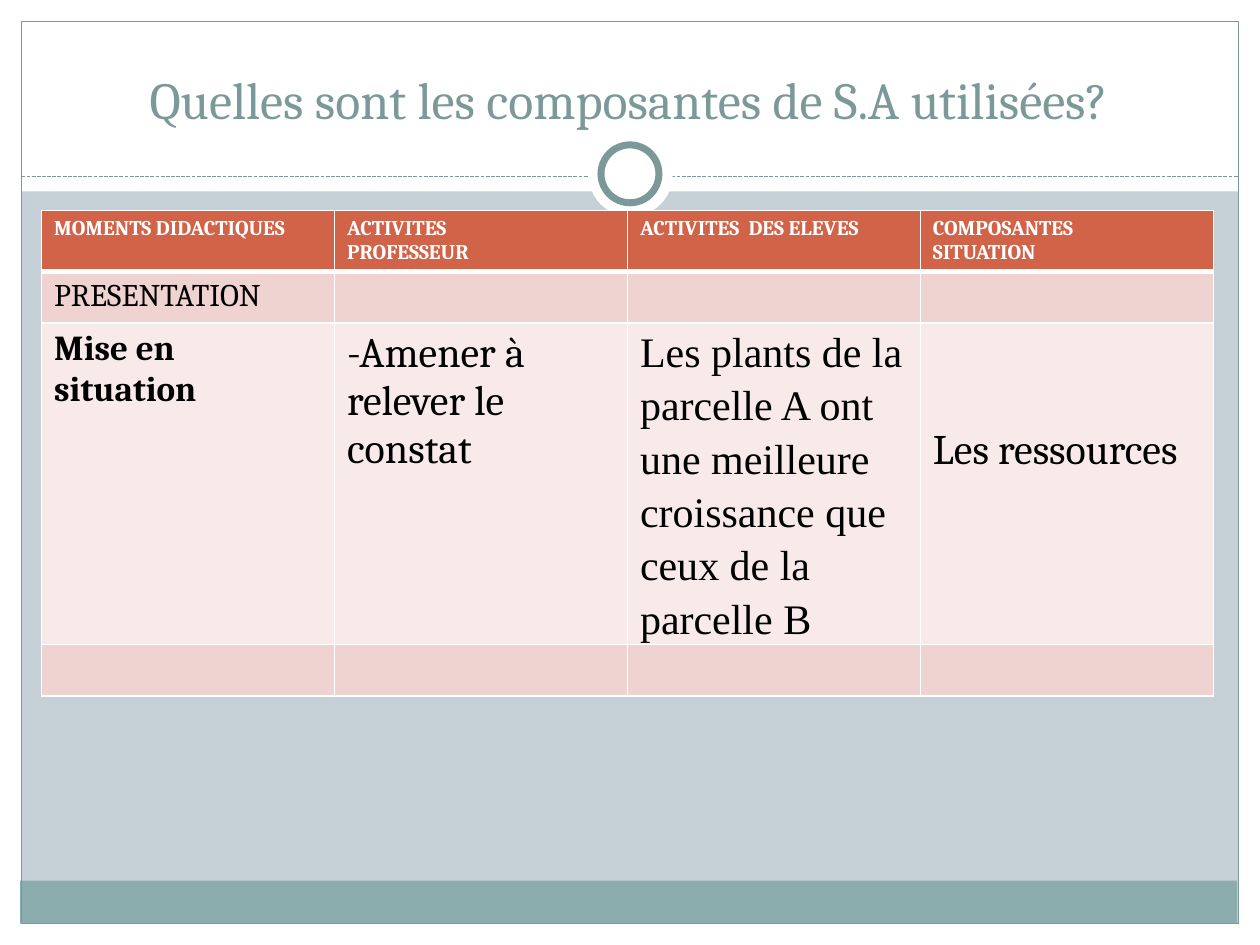
import pptx
import pptx.util
import pptx.dml.color
import pptx.enum.dml
import pptx.enum.shapes
import pptx.enum.text
import pptx.oxml
import pptx.oxml.ns
from dataclasses import dataclass

Inches, Pt = pptx.util.Inches, pptx.util.Pt
Shape = pptx.enum.shapes.MSO_SHAPE
Align = pptx.enum.text.PP_ALIGN


@dataclass
class Theme:
    # Colours
    ground: str = "C5D1D7"
    white: str = "FFFFFF"
    black: str = "000000"
    teal: str = "7C999A"
    band: str = "8CADAE"
    head: str = "D16349"
    rose: str = "EED3D0"
    pale: str = "F7EAE9"
    # Fonts and sizes
    font: str = "Cambria"
    serif: str = "Times New Roman"
    title: float = 29.7
    label: int = 12
    phase: int = 18
    step: int = 20
    body: int = 24


def shade(code):
    return pptx.dml.color.RGBColor.from_string(code)


class Deck:
    def __init__(self, theme):
        self.theme = theme
        self.file = pptx.Presentation()
        self.file.slide_width, self.file.slide_height = Inches(10), Inches(7.5)
        self.slide = self.file.slides.add_slide(self.file.slide_layouts[5])
        fill = self.slide.background.fill
        fill.solid()
        fill.fore_color.rgb = shade(theme.ground)

    def style(self, part, size, colour, bold=False, font=None):
        for run in part.runs:
            run.font.name = font or self.theme.font
            run.font.size = Pt(size)
            run.font.bold = bold
            run.font.color.rgb = shade(colour)

    def shape(self, kind, box, fill=None, line=None, width=0.75):
        item = self.slide.shapes.add_shape(kind, *map(Inches, box))
        item.shadow.inherit = False
        if fill:
            item.fill.solid()
            item.fill.fore_color.rgb = shade(fill)
        else:
            item.fill.background()
        if line:
            item.line.color.rgb = shade(line)
            item.line.width = Pt(width)
        else:
            item.line.fill.background()

    def rule(self, left, right, top):
        line = self.slide.shapes.add_connector(
            pptx.enum.shapes.MSO_CONNECTOR.STRAIGHT,
            Inches(left), Inches(top), Inches(right), Inches(top))
        line.line.color.rgb = shade(self.theme.teal)
        line.line.width = Pt(0.75)
        line.line.dash_style = pptx.enum.dml.MSO_LINE.SQUARE_DOT
        props = line._element.spPr
        props.append(props.makeelement(pptx.oxml.ns.qn("a:effectLst"), {}))

    def title(self, text, box):
        item = self.slide.shapes.title
        item.left, item.top, item.width, item.height = map(Inches, box)
        # Bring the title in front of the white panel
        self.slide.shapes._spTree.append(item._element)
        frame = item.text_frame
        frame.text = text
        frame.word_wrap = True
        frame.vertical_anchor = pptx.enum.text.MSO_ANCHOR.BOTTOM
        frame.paragraphs[0].alignment = Align.CENTER
        self.style(frame.paragraphs[0], self.theme.title, self.theme.teal)

    def edge(self, cell, base):
        props = cell._tc.get_or_add_tcPr()
        for side, width in (("L", 1), ("R", 1), ("T", 1), ("B", base)):
            props.append(pptx.oxml.parse_xml(
                f'<a:ln{side} {pptx.oxml.ns.nsdecls("a")} w="{Pt(width)}">'
                f'<a:solidFill><a:srgbClr val="{self.theme.white}"/></a:solidFill>'
                f'</a:ln{side}>'))

    def table(self, left, top, width, rows, fills, looks):
        count = len(rows[0][1])
        grid = self.slide.shapes.add_table(
            len(rows), count, Inches(left), Inches(top), Inches(width),
            Inches(sum(height for height, _ in rows))).table
        for y, (height, texts) in enumerate(rows):
            grid.rows[y].height = Inches(height)
            for x, text in enumerate(texts):
                cell = grid.cell(y, x)
                self.edge(cell, 3 if y == 0 else 1)
                cell.fill.solid()
                cell.fill.fore_color.rgb = shade(fills[y])
                if text:
                    cell.text_frame.text = text
                    for part in cell.text_frame.paragraphs:
                        self.style(part, *looks.get((y, x), looks[y]))
        return grid

    def save(self):
        self.file.save("out.pptx")


def main():
    theme = Theme()
    deck = Deck(theme)

    # White margins, footer band and frame
    for box in ((0, 7.33, 10, 0.17), (0, 0, 10, 1.52),
                (0, 0, 0.17, 7.5), (9.83, 0, 0.17, 7.5)):
        deck.shape(Shape.RECTANGLE, box, theme.white)
    deck.shape(Shape.RECTANGLE, (0.16, 6.99, 9.66, 0.34), theme.band)
    deck.shape(Shape.RECTANGLE, (0.17, 0.17, 9.66, 7.16), line=theme.teal)

    # Dashed rule with the ring in its centre
    deck.rule(0.17, 9.83, 1.4)
    deck.shape(Shape.OVAL, (4.67, 1.05, 0.67, 0.67), theme.white)
    deck.shape(Shape.OVAL, (4.77, 1.15, 0.46, 0.46), theme.white, theme.teal, 4)

    deck.title("Quelles sont les composantes de S.A utilisées?",
               (0.33, 0.25, 9.33, 0.83))

    # Lesson table: row height and texts
    rows = [
        (0.48, ["MOMENTS DIDACTIQUES", "ACTIVITES\nPROFESSEUR",
                "ACTIVITES  DES ELEVES", "COMPOSANTES\nSITUATION"]),
        (0.41, ["PRESENTATION", "", "", ""]),
        (2.55, ["Mise en situation", "-Amener à relever le constat",
                "Les plants de la parcelle A ont une meilleure croissance "
                "que ceux de la parcelle B", "Les ressources"]),
        (0.41, [""] * 4),
    ]
    fills = [theme.head, theme.rose, theme.pale, theme.rose]
    # Text looks by row, or by row and column
    looks = {
        0: (theme.label, theme.white, True),
        1: (theme.phase, theme.black),
        2: (theme.body, theme.black),
        (2, 0): (theme.step, theme.black, True),
        (2, 2): (theme.body, theme.black, False, theme.serif),
    }
    grid = deck.table(0.33, 1.67, 9.3, rows, fills, looks)

    # Looser lines for the pupils, lower start for the resources
    pupils = grid.cell(2, 2)
    pupils.margin_top = pupils.margin_bottom = 0
    part = pupils.text_frame.paragraphs[0]
    part.line_spacing, part.space_after = 1.15, Pt(10)
    grid.cell(2, 3).margin_top = Inches(0.82)

    deck.save()


if __name__ == "__main__":
    main()
